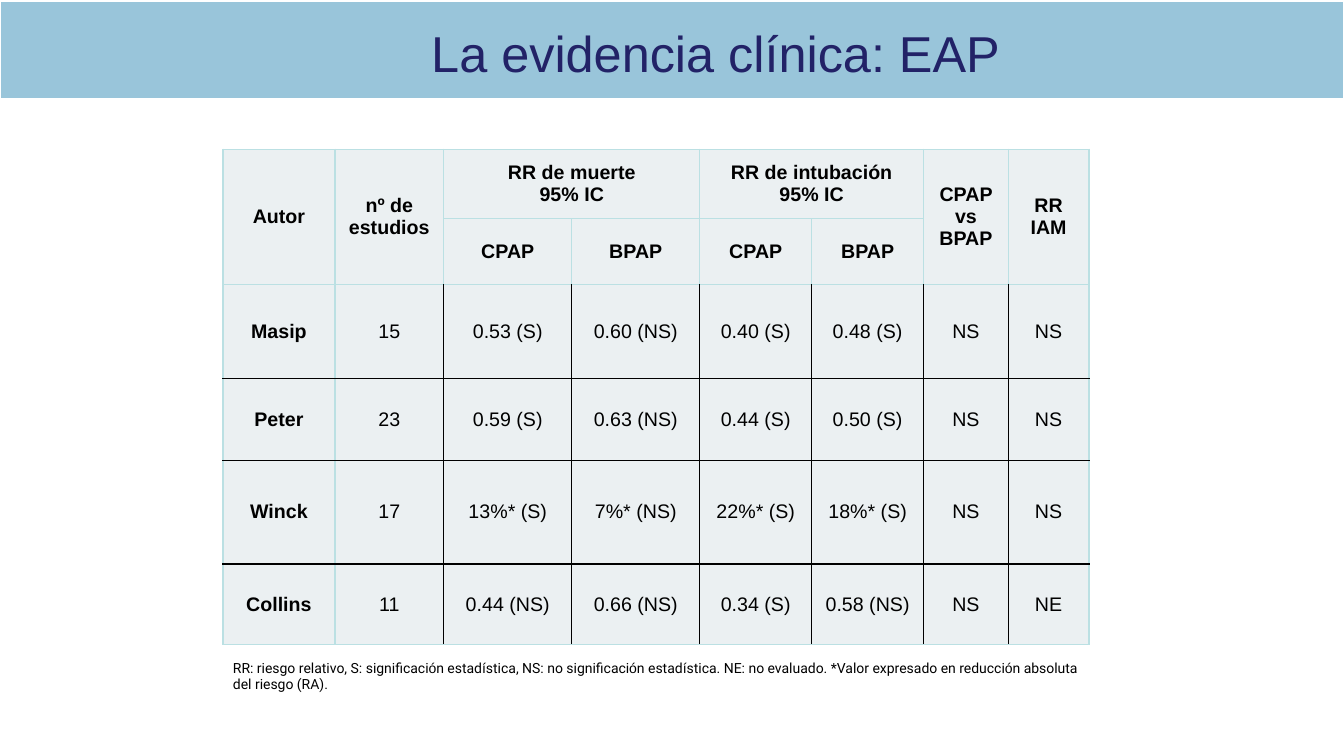
from itertools import groupby

from lxml import etree
from pptx import Presentation, util as u
from pptx.dml.color import RGBColor
from pptx.enum import shapes, text
from pptx.oxml import ns

WIDE, HIGH = 13.33, 7.5
SKY = RGBColor(0x99, 0xC5, 0xDA)
NAVY = RGBColor(0x22, 0x22, 0x67)
MIST = RGBColor(0xEB, 0xF0, 0xF2)
AQUA = RGBColor(0xBB, 0xE0, 0xE3)
BLACK = RGBColor(0, 0, 0)
WHITE = RGBColor(0xFF, 0xFF, 0xFF)

TITLE = "La evidencia clínica: EAP"
NOTE = ("RR: riesgo relativo, S: significación estadística, NS: no significación "
        "estadística. NE: no evaluado. *Valor expresado en reducción absoluta "
        "del riesgo (RA).")
ROWS = [
    ["Autor", "nº de estudios", "RR de muerte\n95% IC", "",
     "RR de intubación\n95% IC", "", "CPAP vs BPAP", "RR IAM"],
    ["", "", "CPAP", "BPAP", "CPAP", "BPAP", "", ""],
    ["Masip", "15", "0.53 (S)", "0.60 (NS)", "0.40 (S)", "0.48 (S)", "NS", "NS"],
    ["Peter", "23", "0.59 (S)", "0.63 (NS)", "0.44 (S)", "0.50 (S)", "NS", "NS"],
    ["Winck", "17", "13%* (S)", "7%* (NS)", "22%* (S)", "18%* (S)", "NS", "NS"],
    ["Collins", "11", "0.44 (NS)", "0.66 (NS)", "0.34 (S)", "0.58 (NS)", "NS", "NE"],
]
COLS = [1.11, 1.08, 1.27, 1.27, 1.11, 1.11, 0.84, 0.8]
HEIGHTS = [0.69, 0.51, 0.93, 0.81, 1.03, 0.8]
HEAD = 2
MERGES = [(0, c, 1, c) for c in (0, 1, 6, 7)] + [(0, c, 0, c + 1) for c in (2, 4)]


def put(item, **vals):
    for key, val in vals.items():
        setattr(item, key, val)


def style(font, color, **vals):
    put(font, **vals)
    font.color.rgb = color


def inch(*box):
    return [u.Inches(side) for side in box]


def banner(slide, x, y, w, h):
    """Colour band with the title centred over the table's axis."""
    band = slide.shapes.add_shape(shapes.MSO_SHAPE.RECTANGLE, *inch(x, y, w, h))
    band.shadow.inherit = False
    band.fill.solid()
    band.fill.fore_color.rgb = SKY
    band.line.color.rgb = WHITE
    band.line.width = u.Pt(2)
    slide.shapes._spTree.insert(2, band._element)

    title = slide.shapes.title
    spot = inch(x + 0.21 * w, y + 0.2 * h, 0.645 * w, 0.64 * h)
    put(title, **dict(zip(("left", "top", "width", "height"), spot)))
    frame = title.text_frame
    put(frame, text=TITLE, vertical_anchor=text.MSO_ANCHOR.MIDDLE,
        auto_size=text.MSO_AUTO_SIZE.NONE)
    par = frame.paragraphs[0]
    par.alignment = text.PP_ALIGN.CENTER
    style(par.runs[0].font, NAVY, name="Arial", size=u.Pt(36))


def rule(cell, row, col):
    """Black rules inside the data area, pale ones elsewhere."""
    data, last = row >= HEAD, len(ROWS) - 1
    dark = {
        "L": data and col > 1,
        "R": data and 0 < col < len(COLS) - 1,
        "T": row > HEAD,
        "B": data and row < last,
    }
    props = cell._tc.get_or_add_tcPr()
    for side, black in dark.items():
        line = etree.SubElement(props, ns.qn(f"a:ln{side}"), w=str(u.Pt(1)))
        fill = etree.SubElement(line, ns.qn("a:solidFill"))
        etree.SubElement(fill, ns.qn("a:srgbClr"), val=str(BLACK if black else AQUA))


def fill_cell(cell, row, col):
    rule(cell, row, col)
    cell.fill.solid()
    cell.fill.fore_color.rgb = MIST
    put(cell, text=ROWS[row][col], vertical_anchor=text.MSO_ANCHOR.MIDDLE,
        margin_left=u.Inches(0.07), margin_right=u.Inches(0.07),
        margin_top=0, margin_bottom=0)
    for par in cell.text_frame.paragraphs:
        par.alignment = text.PP_ALIGN.CENTER
        for part in (par, *par.runs):
            style(part.font, BLACK, name="Arial", size=u.Pt(14),
                  bold=row < HEAD or col == 0)


def results(slide, x, y):
    box = inch(x, y, sum(COLS), sum(HEIGHTS))
    grid = slide.shapes.add_table(len(ROWS), len(COLS), *box).table
    put(grid, first_row=False, horz_banding=False)
    for col, wide in zip(grid.columns, COLS):
        col.width = u.Inches(wide)
    for row, high in zip(grid.rows, HEIGHTS):
        row.height = u.Inches(high)
    for r in range(len(ROWS)):
        for c in range(len(COLS)):
            fill_cell(grid.cell(r, c), r, c)
    for top, left, low, right in MERGES:
        grid.cell(top, left).merge(grid.cell(low, right))


def legend(slide, x, y, w, h):
    """Footnote whose accented letters are set in Arial."""
    frame = slide.shapes.add_textbox(*inch(x, y, w, h)).text_frame
    put(frame, word_wrap=True, vertical_anchor=text.MSO_ANCHOR.MIDDLE,
        auto_size=text.MSO_AUTO_SIZE.SHAPE_TO_FIT_TEXT)
    for accent, part in groupby(NOTE, lambda sign: sign in "óí"):
        run = frame.paragraphs[0].add_run()
        run.text = "".join(part)
        style(run.font, BLACK, name="Arial" if accent else "Roboto", size=u.Pt(10))


def main():
    deck = Presentation()
    put(deck, slide_width=u.Inches(WIDE), slide_height=u.Inches(HIGH))
    slide = deck.slides.add_slide(deck.slide_layouts[5])
    left = WIDE / 6 - 0.01
    banner(slide, 0, 0.01, WIDE, 0.13 * HIGH)
    results(slide, left, 0.2 * HIGH - 0.02)
    legend(slide, left, 0.864 * HIGH, sum(COLS), 0.06 * HIGH)
    deck.save("out.pptx")


if __name__ == "__main__":
    main()
